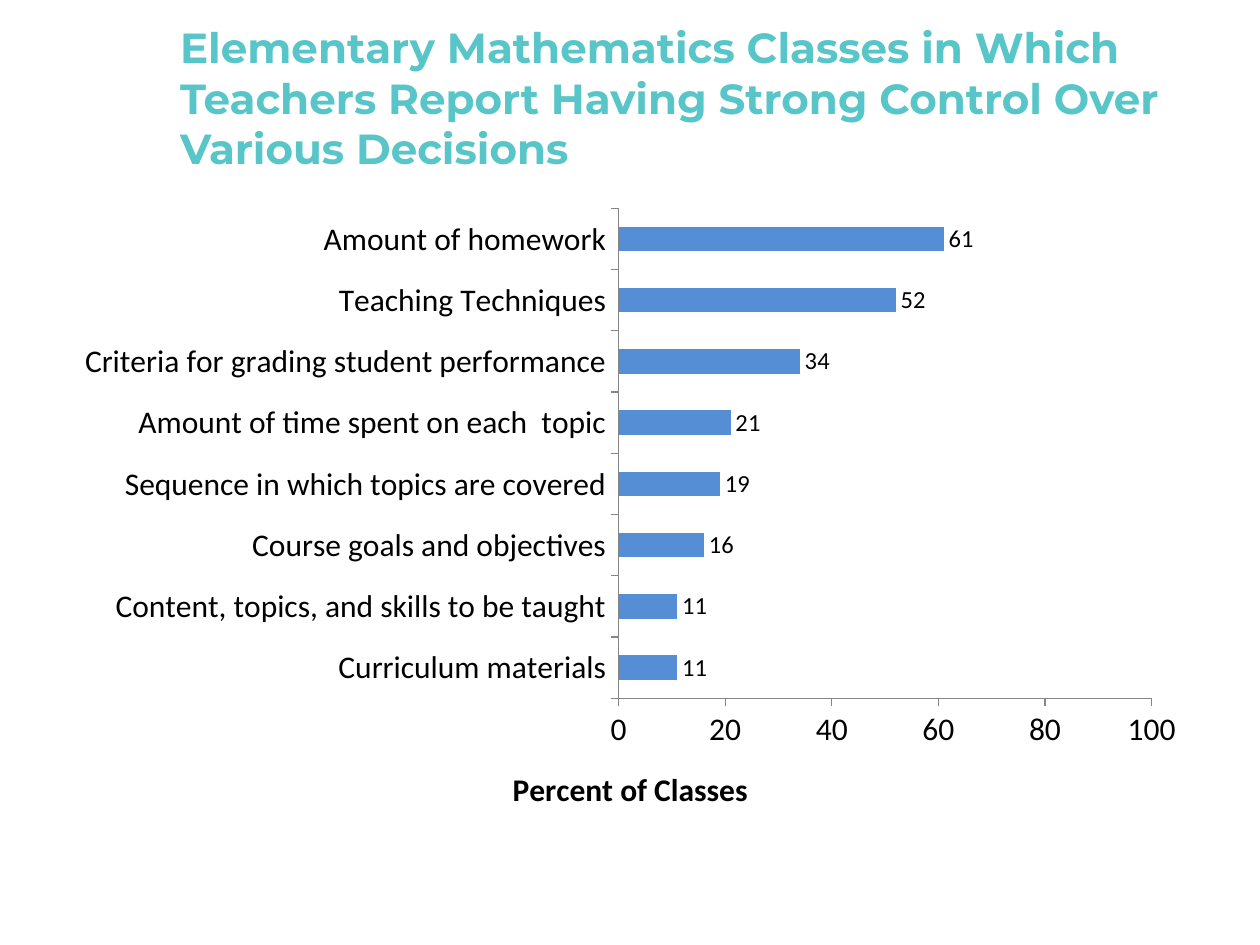
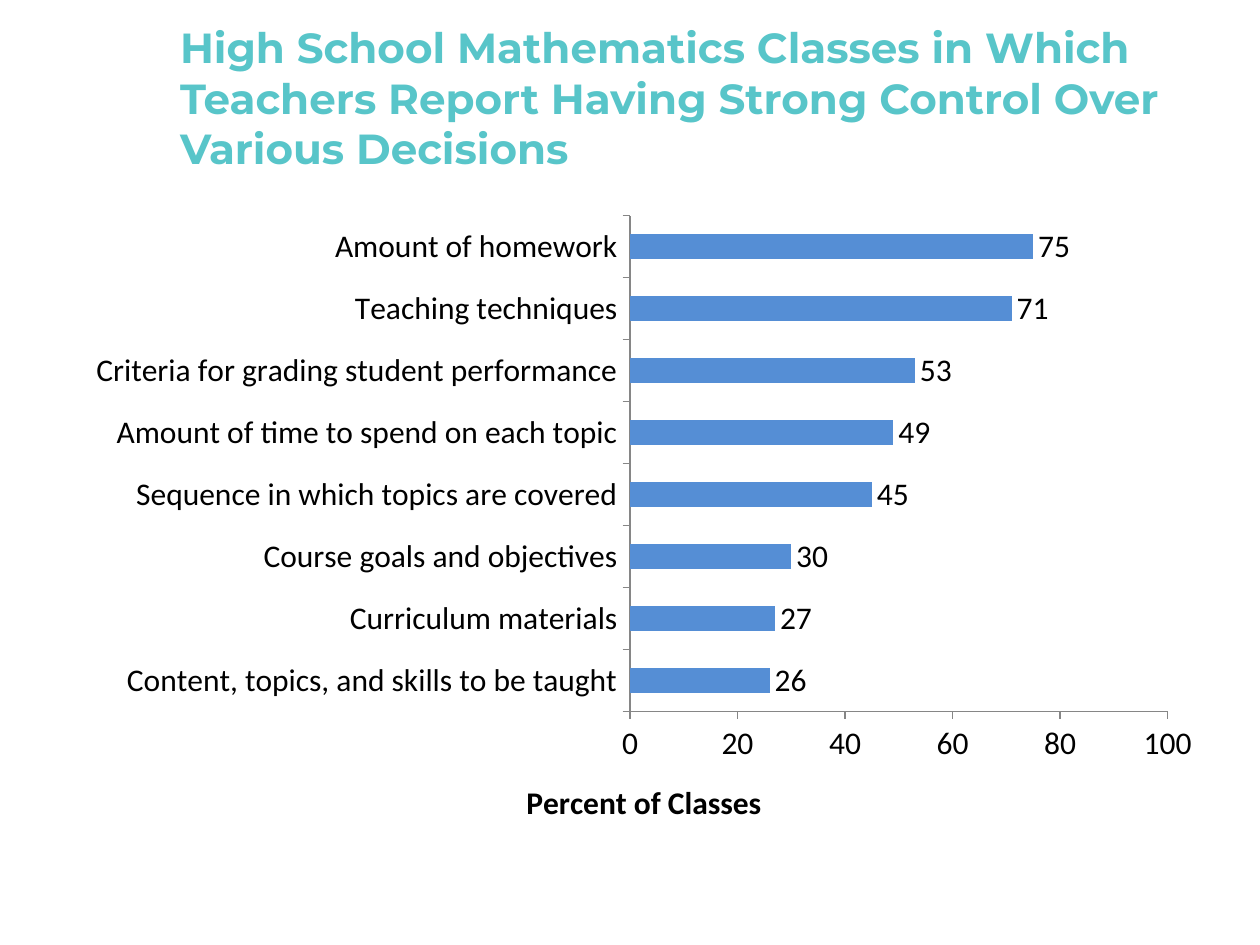
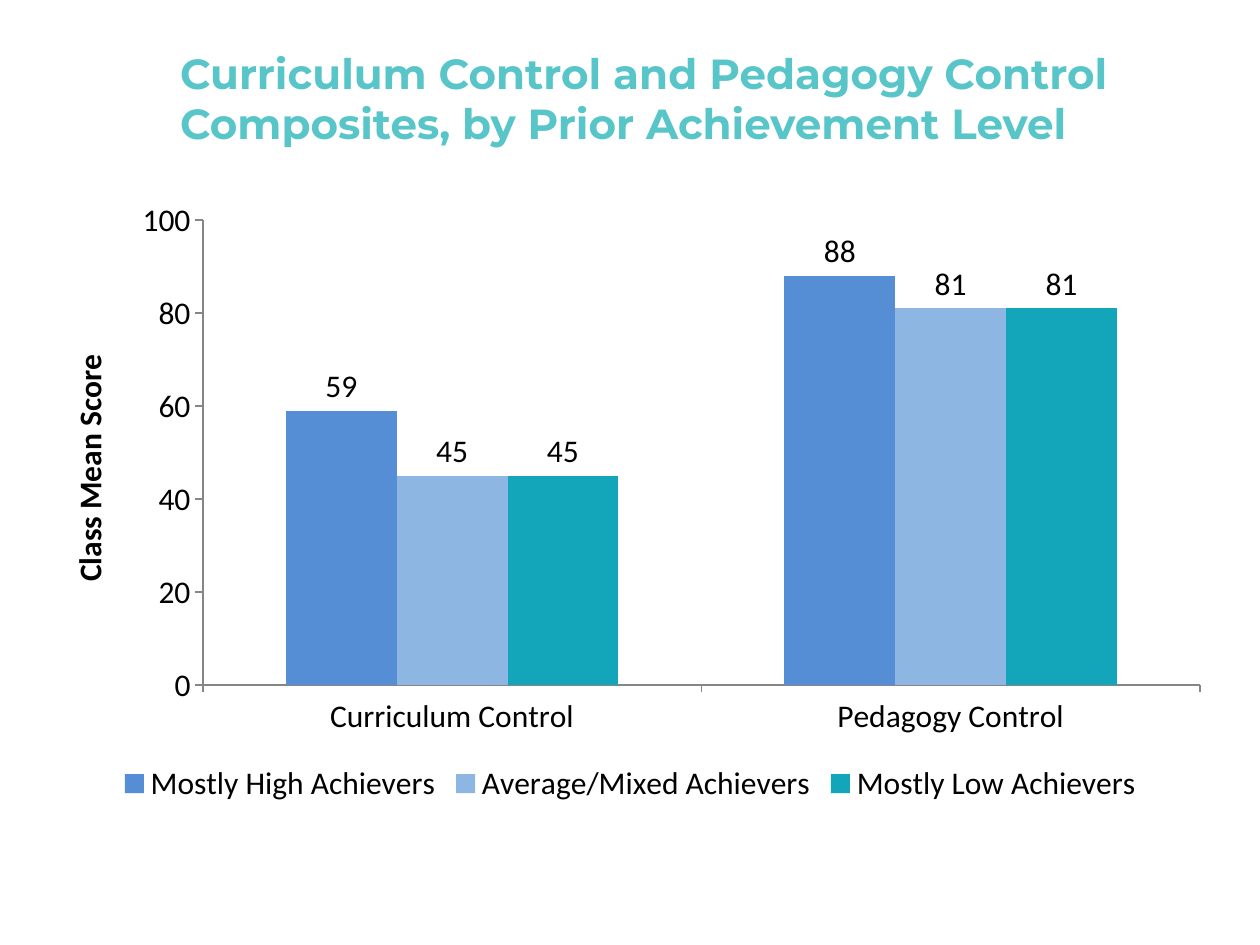
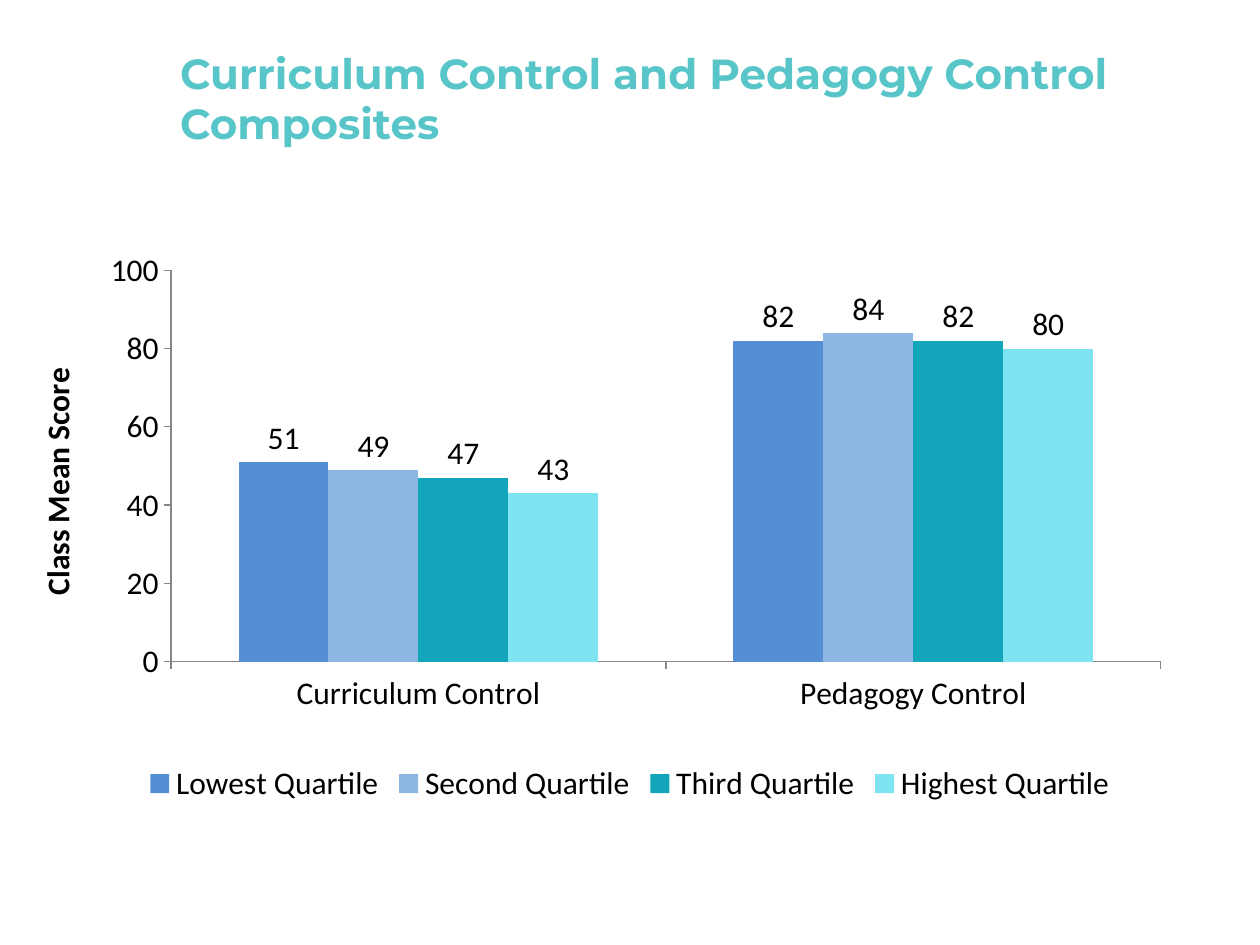
import dataclasses

import lxml.etree
import pptx
import pptx.chart.data
import pptx.dml.color
import pptx.enum.chart
import pptx.enum.text
import pptx.oxml.ns
import pptx.util

Cm = pptx.util.Cm
Pt = pptx.util.Pt
rgb = pptx.dml.color.RGBColor.from_string
chart_enum = pptx.enum.chart


@dataclasses.dataclass(frozen=True)
class Theme:
    title_font: str = "Montserrat"
    chart_font: str = "Calibri"
    title_size: int = 24
    chart_size: int = 18
    title_color: str = "58C5C9"
    text_color: str = "000000"
    axis_color: str = "868686"
    series_colors: tuple = ("558ED5", "8EB6E3", "13A6BA", "7FE4F2")


THEME = Theme()
SLIDE_SIZE = (25.4, 19.05)
TITLE_BOX = (3.38, 0.76, 20.75, 2.41)

BAR = chart_enum.XL_CHART_TYPE.BAR_CLUSTERED
COLUMN = chart_enum.XL_CHART_TYPE.COLUMN_CLUSTERED
COMPOSITES = ["Curriculum Control", "Pedagogy Control"]

# "box" is left, top, width, height in cm; "plot" is the same as shares of the box.
SLIDES = [
    {
        "title": "Elementary Mathematics Classes in Which Teachers Report "
                 "Having Strong Control Over Various Decisions",
        "type": BAR,
        "box": (1.27, 3.94, 22.86, 13),
        "plot": (0.49, 0.02, 0.47, 0.76),
        "axis_title": "Percent of Classes",
        "label_size": 14,
        "categories": [
            "Curriculum materials",
            "Content, topics, and skills to be taught",
            "Course goals and objectives",
            "Sequence in which topics are covered",
            "Amount of time spent on each  topic",
            "Criteria for grading student performance",
            "Teaching Techniques",
            "Amount of homework",
        ],
        "series": {"Series 1": [11, 11, 16, 19, 21, 34, 52, 61]},
    },
    {
        "title": "High School Mathematics Classes in Which Teachers Report "
                 "Having Strong Control Over Various Decisions",
        "type": BAR,
        "box": (1.17, 3.96, 23.06, 12.98),
        "plot": (0.5, 0.03, 0.47, 0.77),
        "axis_title": "Percent of Classes",
        "categories": [
            "Content, topics, and skills to be taught",
            "Curriculum materials",
            "Course goals and objectives",
            "Sequence in which topics are covered",
            "Amount of time to spend on each topic",
            "Criteria for grading student performance",
            "Teaching techniques",
            "Amount of homework",
        ],
        "series": {"Series 1": [26, 27, 30, 45, 49, 53, 71, 75]},
    },
    {
        "title": "Curriculum Control and Pedagogy Control Composites, "
                 "by Prior Achievement Level",
        "type": COLUMN,
        "box": (0.74, 3.81, 23.93, 12.5),
        "plot": (0.14, 0.05, 0.84, 0.75),
        "axis_title": "Class Mean Score",
        "categories": COMPOSITES,
        "series": {
            "Mostly High Achievers": [59, 88],
            "Average/Mixed Achievers": [45, 81],
            "Mostly Low Achievers": [45, 81],
        },
    },
    {
        "title": "Curriculum Control and Pedagogy Control Composites",
        "type": COLUMN,
        "box": (0.53, 4.88, 24.33, 11.43),
        "plot": (0.12, 0.05, 0.82, 0.69),
        "axis_title": "Class Mean Score",
        "categories": COMPOSITES,
        "series": {
            "Lowest Quartile": [51, 82],
            "Second Quartile": [49, 84],
            "Third Quartile": [47, 82],
            "Highest Quartile": [43, 80],
        },
    },
]


def style_font(font, name, size, color, bold=False):
    font.name = name
    font.size = Pt(size)
    font.bold = bold
    font.color.rgb = rgb(color)


def style_chart_font(font, size=THEME.chart_size, bold=False):
    style_font(font, THEME.chart_font, size, THEME.text_color, bold)


def add_title(slide, text):
    frame = slide.shapes.add_textbox(*map(Cm, TITLE_BOX)).text_frame
    frame.word_wrap = True
    frame.vertical_anchor = pptx.enum.text.MSO_ANCHOR.MIDDLE
    run = frame.paragraphs[0].add_run()
    run.text = text
    style_font(run.font, THEME.title_font, THEME.title_size, THEME.title_color, bold=True)


def set_plot_layout(chart, shares):
    """Fix the inner plot area at the given shares of the chart box."""
    qn = pptx.oxml.ns.qn
    plot_area = chart._chartSpace.chart.plotArea
    for old_layout in plot_area.findall(qn("c:layout")):
        plot_area.remove(old_layout)
    layout = lxml.etree.Element(qn("c:layout"))
    manual = lxml.etree.SubElement(layout, qn("c:manualLayout"))
    settings = [("layoutTarget", "inner"), ("xMode", "edge"), ("yMode", "edge")]
    settings += zip("xywh", shares)
    for tag, value in settings:
        lxml.etree.SubElement(manual, qn(f"c:{tag}")).set("val", str(value))
    plot_area.insert(0, layout)


def style_axes(chart, axis_title):
    value_axis = chart.value_axis
    for axis in (chart.category_axis, value_axis):
        axis.has_major_gridlines = False
        axis.major_tick_mark = chart_enum.XL_TICK_MARK.OUTSIDE
        axis.minor_tick_mark = chart_enum.XL_TICK_MARK.NONE
        axis.format.line.color.rgb = rgb(THEME.axis_color)
        axis.format.line.width = Pt(0.75)
        style_chart_font(axis.tick_labels.font)
    value_axis.minimum_scale = 0
    value_axis.maximum_scale = 100
    value_axis.major_unit = 20
    run = value_axis.axis_title.text_frame.paragraphs[0].add_run()
    run.text = axis_title
    style_chart_font(run.font, bold=True)


def style_series(plot, label_size):
    plot.gap_width = 150
    plot.overlap = 0
    plot.vary_by_categories = False
    for series, color in zip(plot.series, THEME.series_colors):
        series.format.fill.solid()
        series.format.fill.fore_color.rgb = rgb(color)
        labels = series.data_labels
        labels.show_value = True
        labels.position = chart_enum.XL_LABEL_POSITION.OUTSIDE_END
        style_chart_font(labels.font, label_size)


def add_bar_chart(slide, content):
    data = pptx.chart.data.CategoryChartData()
    data.categories = content["categories"]
    for name, values in content["series"].items():
        data.add_series(name, values)
    chart = slide.shapes.add_chart(content["type"], *map(Cm, content["box"]), data).chart
    style_chart_font(chart.font)
    chart.has_title = False
    chart.has_legend = len(content["series"]) > 1
    if chart.has_legend:
        chart.legend.position = chart_enum.XL_LEGEND_POSITION.BOTTOM
        chart.legend.include_in_layout = False
        style_chart_font(chart.legend.font)
    style_axes(chart, content["axis_title"])
    style_series(chart.plots[0], content.get("label_size", THEME.chart_size))
    set_plot_layout(chart, content["plot"])


def main():
    presentation = pptx.Presentation()
    presentation.slide_width, presentation.slide_height = map(Cm, SLIDE_SIZE)
    blank_layout = presentation.slide_layouts[6]
    for content in SLIDES:
        slide = presentation.slides.add_slide(blank_layout)
        add_title(slide, content["title"])
        add_bar_chart(slide, content)
    presentation.save("out.pptx")


if __name__ == "__main__":
    main()
